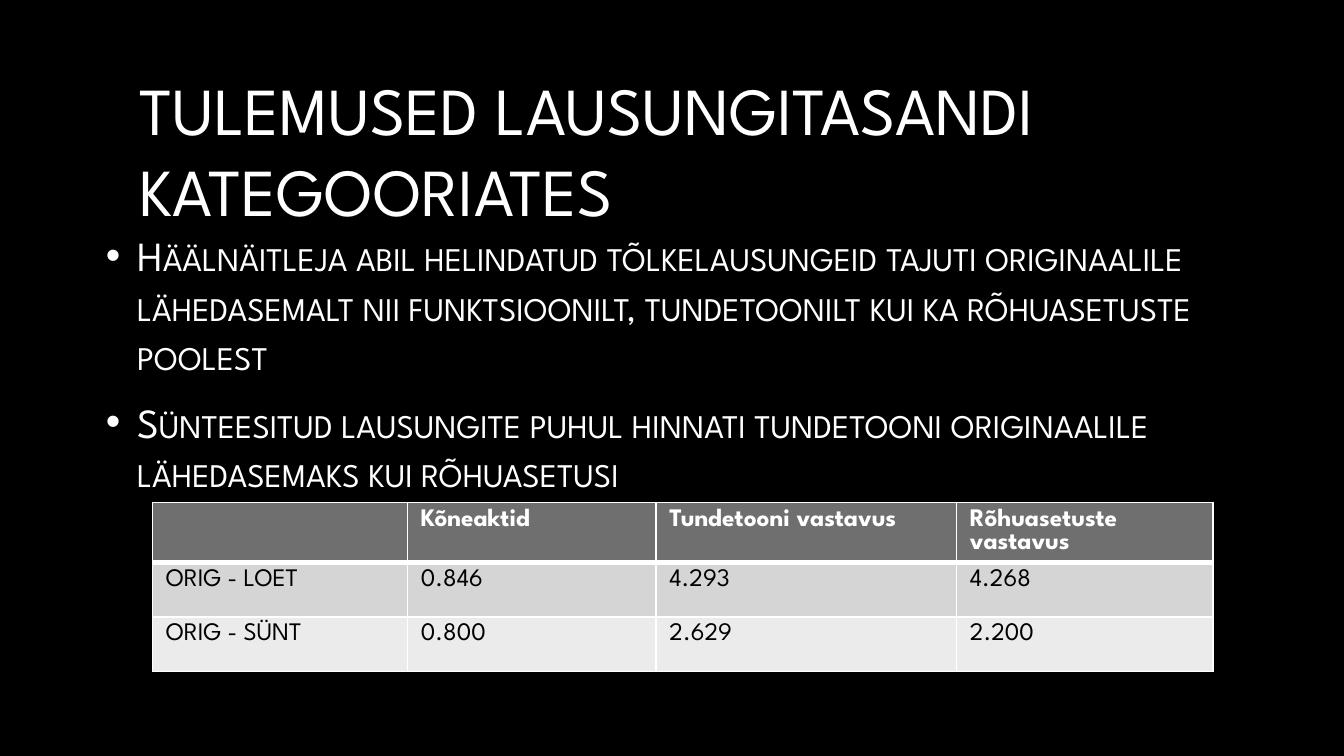
from lxml.etree import SubElement
from pptx import Presentation
from pptx.dml.color import RGBColor
from pptx.enum.text import MSO_ANCHOR as Anchor, MSO_AUTO_SIZE as AutoSize, PP_ALIGN as Align
from pptx.oxml.ns import qn
from pptx.util import Pt

COLORS = {"back": "000000", "light": "FFFFFF", "dark": "000000",
          "header": "6F6F6F", "odd": "D5D5D5", "even": "EBEBEB"}
FONT = "League Spartan"

TITLE = "TULEMUSED LAUSUNGITASANDI KATEGOORIATES"
FINDINGS = [
    "Häälnäitleja abil helindatud tõlkelausungeid tajuti originaalile lähedasemalt "
    "nii funktsioonilt, tundetoonilt kui ka rõhuasetuste poolest",
    "Sünteesitud lausungite puhul hinnati tundetooni originaalile lähedasemaks "
    "kui rõhuasetusi",
]
SCORES = [
    ["", "Kõneaktid", "Tundetooni vastavus", "Rõhuasetuste vastavus"],
    ["ORIG - LOET", "0.846", "4.293", "4.268"],
    ["ORIG - SÜNT", "0.800", "2.629", "2.200"],
]


def rgb(name):
    return RGBColor.from_string(COLORS[name])


def write(para, text, size, color="light", bold=False, small_caps=False):
    para.alignment = Align.LEFT
    para.font.size = Pt(size)
    if not text:
        return
    span = para.add_run()
    span.text = text
    span.font.name = FONT
    span.font.size = Pt(size)
    span.font.bold = bold
    span.font.color.rgb = rgb(color)
    if small_caps:
        span.font._element.set("cap", "small")


def place(holder, box):
    """Move a placeholder to the box and return its text frame, centred vertically."""
    holder.left, holder.top, holder.width, holder.height = map(Pt, box)
    frame = holder.text_frame
    frame.word_wrap = True
    frame.auto_size = AutoSize.NONE
    frame.vertical_anchor = Anchor.MIDDLE
    return frame


def add_bullet(para, indent):
    props = para._p.get_or_add_pPr()
    props.set("marL", str(Pt(indent)))
    props.set("indent", str(-Pt(indent)))
    color = SubElement(props, qn("a:buClr"))
    SubElement(color, qn("a:srgbClr"), val=COLORS["light"])
    SubElement(props, qn("a:buFont"), typeface="Arial")
    SubElement(props, qn("a:buChar"), char="•")


def fill_title(page, box):
    frame = place(page.shapes.title, box)
    write(frame.paragraphs[0], TITLE, size=36)


def fill_findings(page, box):
    frame = place(page.placeholders[1], box)
    for index, text in enumerate(FINDINGS):
        para = frame.paragraphs[0] if index == 0 else frame.add_paragraph()
        add_bullet(para, indent=16.8)
        para.space_before = Pt(4.8 if index else 0)
        para.space_after = Pt(4.5)
        write(para, text, size=22.2, small_caps=True)


def add_borders(cell, **widths):
    props = cell._tc.get_or_add_tcPr()
    for side in "LRTB":
        line = SubElement(props, qn(f"a:ln{side}"), w=str(Pt(widths.get(side, 1))))
        fill = SubElement(line, qn("a:solidFill"))
        SubElement(fill, qn("a:srgbClr"), val=COLORS["light"])


def add_scores(page, box, col_widths, row_height):
    table = page.shapes.add_table(len(SCORES), len(col_widths), *map(Pt, box)).table
    for column, width in zip(table.columns, col_widths):
        column.width = Pt(width)
    for r, values in enumerate(SCORES):
        table.rows[r].height = Pt(row_height)
        is_header = r == 0
        shade = "header" if is_header else ("odd" if r % 2 else "even")
        heavy = {0: {"B": 3}, 1: {"T": 3}}.get(r, {})
        for c, text in enumerate(values):
            cell = table.cell(r, c)
            add_borders(cell, **heavy)
            cell.fill.solid()
            cell.fill.fore_color.rgb = rgb(shade)
            write(cell.text_frame.paragraphs[0], text, size=13.5, bold=is_header,
                  color="light" if is_header else "dark")


def main():
    deck = Presentation()
    deck.slide_width, deck.slide_height = Pt(720), Pt(405)
    page = deck.slides.add_slide(deck.slide_layouts[1])
    page.background.fill.solid()
    page.background.fill.fore_color.rgb = rgb("back")
    fill_title(page, (67.5, 24, 585, 112))
    fill_findings(page, (49.5, 124, 621, 141))
    add_scores(page, (81.7, 269.2, 568.2, 88), (136.6, 133.2, 161, 137.4), 29.3)
    deck.save("out.pptx")


if __name__ == "__main__":
    main()
